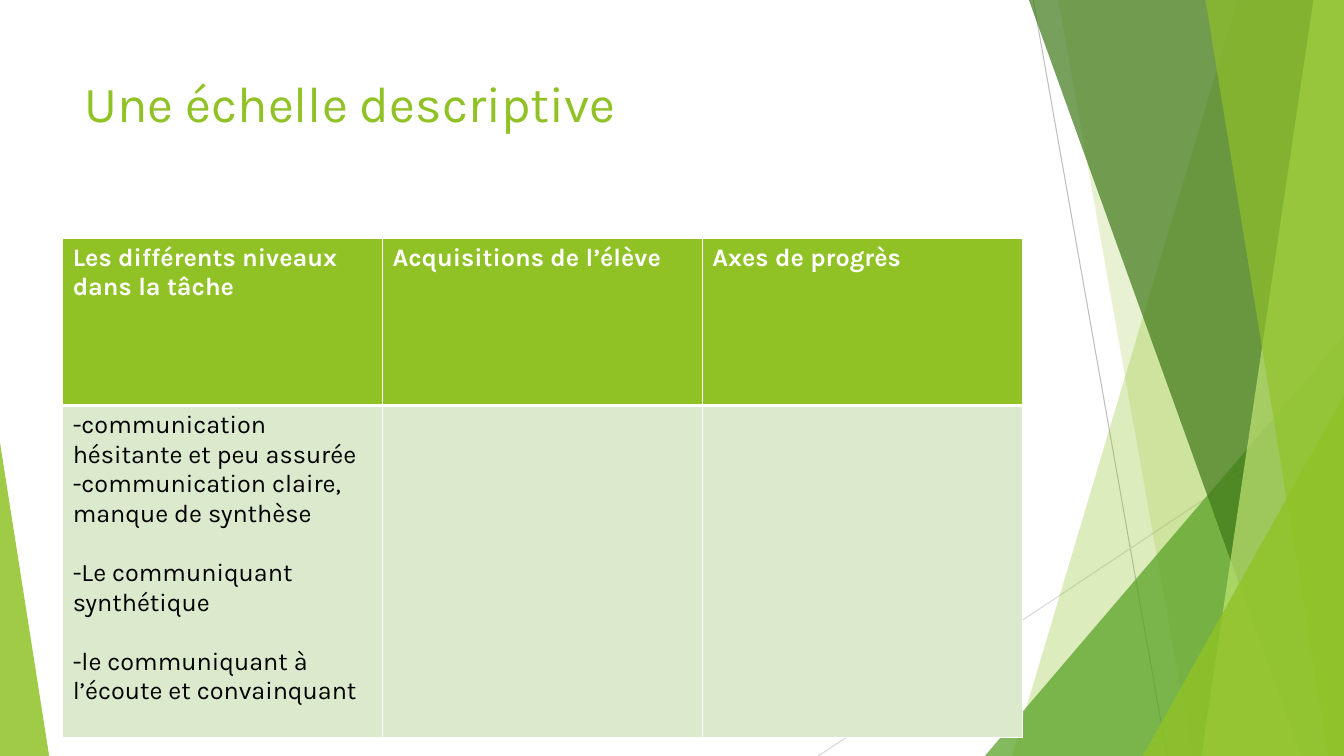
from dataclasses import dataclass

from lxml import etree
from pptx import Presentation
from pptx import util as u
from pptx.dml.color import RGBColor
from pptx.enum import shapes, text
from pptx.oxml import ns


@dataclass(frozen=True)
class Theme:
    """Colours, font and type sizes of the slide."""
    font: str = "Karla"
    title_size: int = 36
    body_size: int = 18
    row_gap: int = 21
    lime: str = "90C226"
    pale_lime: str = "C0E474"
    green: str = "54A021"
    dark_green: str = "3F7819"
    cell: str = "DBE9CD"
    white: str = "FFFFFF"
    black: str = "000000"
    line_dark: str = "BFBFBF"
    line_light: str = "D9D9D9"


class SlideBuilder:
    """Holds the theme and the current slide and adds elements to it."""

    def __init__(self, prs, theme):
        """Open a title-only slide."""
        self.theme = theme
        self.width = prs.slide_width
        self.height = prs.slide_height
        self.s = prs.slides.add_slide(prs.slide_layouts[5])

    def run(self, p, words, size, color, bold=False):
        """Add one formatted run to a paragraph."""
        r = p.add_run()
        r.text = words
        r.font.name = self.theme.font
        r.font.size = u.Pt(size)
        r.font.bold = bold
        r.font.color.rgb = RGBColor.from_string(color)

    def paint(self, sp, color, opacity):
        """Give a shape a translucent fill without line or shadow."""
        sp.shadow.inherit = False
        sp.line.fill.background()
        sp.fill.solid()
        sp.fill.fore_color.rgb = RGBColor.from_string(color)
        clr = sp.element.spPr.find(".//" + ns.qn("a:srgbClr"))
        etree.SubElement(clr, ns.qn("a:alpha"), val=str(opacity * 1000))

    def line(self, x1, y1, x2, y2, color):
        """Add a thin straight line."""
        c = self.s.shapes.add_connector(
            shapes.MSO_CONNECTOR.STRAIGHT, u.Cm(x1), u.Cm(y1), u.Cm(x2), u.Cm(y2))
        c.line.color.rgb = RGBColor.from_string(color)
        c.line.width = u.Pt(0.75)
        etree.SubElement(c.element.spPr, ns.qn("a:effectLst"))

    def band(self, top_x, bottom_x, color, opacity):
        """Add a full-height band from a slanted left edge to the slide's right edge."""
        fb = self.s.shapes.build_freeform(u.Cm(top_x), 0)
        fb.add_line_segments([(self.width, 0), (self.width, self.height),
                              (u.Cm(bottom_x), self.height)])
        self.paint(fb.convert_to_shape(), color, opacity)

    def triangle(self, left, top, width, apex, color, opacity):
        """Add a triangle standing on the bottom edge of the slide."""
        sp = self.s.shapes.add_shape(
            shapes.MSO_SHAPE.ISOSCELES_TRIANGLE, u.Cm(left), u.Cm(top),
            u.Cm(width), self.height - u.Cm(top))
        sp.adjustments[0] = apex
        self.paint(sp, color, opacity)

    def title(self, words, left, top, width, height):
        """Place and format the title above the decoration."""
        sp = self.s.shapes.title
        sp.left, sp.top, sp.width, sp.height = map(u.Cm, (left, top, width, height))
        sp.element.getparent().append(sp.element)
        tf = sp.text_frame
        tf.word_wrap = True
        tf.auto_size = text.MSO_AUTO_SIZE.NONE
        tf.vertical_anchor = text.MSO_ANCHOR.TOP
        p = tf.paragraphs[0]
        p.alignment = text.PP_ALIGN.LEFT
        self.run(p, words, self.theme.title_size, self.theme.lime)

    def borders(self, cell, widths):
        """Draw white borders, with widths in points for each side."""
        tc_pr = cell._tc.get_or_add_tcPr()
        for i, (side, width) in enumerate(widths.items()):
            ln = etree.Element(ns.qn("a:ln" + side), w=str(u.Pt(width)))
            fill = etree.SubElement(ln, ns.qn("a:solidFill"))
            etree.SubElement(fill, ns.qn("a:srgbClr"), val=self.theme.white)
            tc_pr.insert(i, ln)

    def table(self, rows, left, top, col_width, heights):
        """Add a table whose cells are lists of (words, space before) pairs."""
        t = self.theme
        cols = len(rows[0])
        tbl = self.s.shapes.add_table(
            len(rows), cols, u.Cm(left), u.Cm(top),
            u.Cm(col_width * cols), u.Cm(sum(heights))).table
        for col in tbl.columns:
            col.width = u.Cm(col_width)
        for i, (row, height) in enumerate(zip(rows, heights)):
            tbl.rows[i].height = u.Cm(height)
            head = i == 0
            for j, paragraphs in enumerate(row):
                cell = tbl.cell(i, j)
                cell.fill.solid()
                cell.fill.fore_color.rgb = RGBColor.from_string(t.lime if head else t.cell)
                self.borders(cell, {"L": 1, "R": 1, "T": 1 if head else 3,
                                    "B": 3 if head else 1})
                tf = cell.text_frame
                for k, (words, gap) in enumerate(paragraphs):
                    p = tf.add_paragraph() if k else tf.paragraphs[0]
                    p.space_before = u.Pt(gap)
                    self.run(p, words, t.body_size, t.white if head else t.black, head)


def main():
    """Build the slide and save it."""
    prs = Presentation()
    prs.slide_width, prs.slide_height = u.Cm(33.87), u.Cm(19.05)
    t = Theme()
    b = SlideBuilder(prs, t)

    b.line(26.04, 0, 29.41, 19.05, t.line_dark)
    b.line(33.87, 10.24, 20.62, 19.05, t.line_light)
    b.band(31.19, 25.5, t.lime, 30)
    b.band(26.67, 30.05, t.lime, 20)
    b.triangle(24.82, 8.46, 9.05, 1, t.green, 72)
    b.band(25.93, 32.79, t.dark_green, 70)
    b.band(33.1, 30.28, t.pale_lime, 70)
    b.band(30.38, 33.48, t.lime, 65)
    b.triangle(28.8, 9.98, 5.07, 1, t.lime, 80)
    b.triangle(0, 11.15, 1.24, 0, t.lime, 85)

    b.title("Une échelle descriptive", 1.88, 1.7, 23.88, 3.66)
    headings = ["Les différents niveaux dans la tâche", "Acquisitions de l’élève",
                "Axes de progrès"]
    levels = [("-communication hésitante et peu assurée", 0),
              ("-communication claire, manque de synthèse", 0),
              ("-Le communiquant synthétique", t.row_gap),
              ("-le communiquant à l’écoute et convainquant", t.row_gap)]
    b.table([[[(h, 0)] for h in headings], [levels, [], []]],
            1.58, 6, 8.06, [4.22, 8.37])
    prs.save("out.pptx")


if __name__ == "__main__":
    main()
